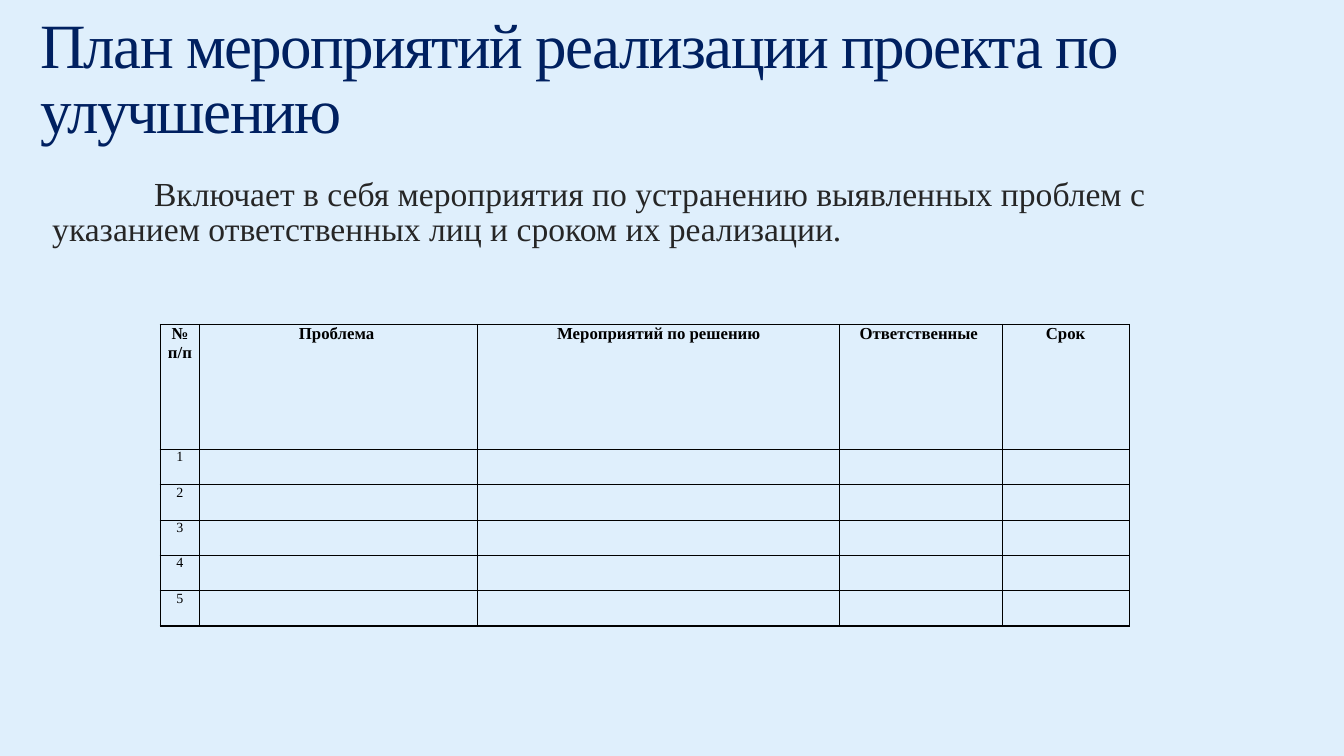
from lxml.etree import SubElement as Sub
from pptx import Presentation
from pptx.dml.color import RGBColor
from pptx.enum.text import MSO_ANCHOR as Anchor, PP_ALIGN as Align
from pptx.oxml.ns import qn
from pptx.util import Inches, Pt

SKY = RGBColor(0xDF, 0xEF, 0xFC)
NAVY = RGBColor(0x00, 0x20, 0x60)
GREY = RGBColor(0x26, 0x26, 0x26)
BLACK = RGBColor(0, 0, 0)
FONT = "Times New Roman"


def write(frame, text, size, color, bold=False):
    """Put one formatted run into the frame's first paragraph."""
    para = frame.paragraphs[0]
    run = para.add_run()
    run.text = text
    for key, value in {"name": FONT, "size": Pt(size), "bold": bold}.items():
        setattr(run.font, key, value)
    run.font.color.rgb = color
    return para, run


def edge(cell):
    """Draw a thin black line on all four sides of the cell."""
    props = cell._tc.get_or_add_tcPr()
    for side in ("lnL", "lnR", "lnT", "lnB"):
        line = Sub(props, qn(f"a:{side}"), w=str(Pt(1)))
        fill = Sub(line, qn("a:solidFill"))
        Sub(fill, qn("a:srgbClr"), val=str(BLACK))


# Slide
deck = Presentation()
deck.slide_width, deck.slide_height = Inches(13.33), Inches(7.5)
slide = deck.slides.add_slide(deck.slide_layouts[6])
back = slide.background.fill
back.solid()
back.fore_color.rgb = SKY

# Title and lead text
TEXTS = [
    ((0.3, 0.24, 11.78, 1.14), Anchor.MIDDLE, 45, NAVY,
     "План мероприятий реализации проекта по улучшению"),
    ((0.32, 1.73, 11.76, 1.14), Anchor.TOP, 24, GREY,
     "Включает в себя мероприятия по устранению выявленных проблем "
     "с указанием ответственных лиц и сроком их реализации."),
]
lines = []
for place, anchor, size, color, text in TEXTS:
    frame = slide.shapes.add_textbox(*map(Inches, place)).text_frame
    frame.word_wrap = True
    frame.vertical_anchor = anchor
    para, run = write(frame, text, size, color)
    para.line_spacing = 0.85
    lines.append((para, run))

# Tight letters in the title, first-line indent in the lead
lines[0][1]._r.get_or_add_rPr().set("spc", "-120")
lead = lines[1][0]._p.get_or_add_pPr()
lead.set("marL", str(Inches(0.1)))
lead.set("indent", str(Inches(1.01)))

# Plan table
HEADS = ["№ п/п", "Проблема ", "Мероприятий по решению",
         "Ответственные ", "Срок"]
WIDTHS = [0.39, 2.76, 3.59, 1.61, 1.26]
HEIGHTS = [1.24] + [0.35] * 5
MARGINS = {"margin_left": 0.06, "margin_right": 0.06,
           "margin_top": 0, "margin_bottom": 0}

table = slide.shapes.add_table(
    len(HEIGHTS), len(WIDTHS), Inches(1.59), Inches(3.22),
    Inches(sum(WIDTHS)), Inches(sum(HEIGHTS))).table
table.first_row = table.horz_banding = False
for col, width in zip(table.columns, WIDTHS):
    col.width = Inches(width)
for row, height in zip(table.rows, HEIGHTS):
    row.height = Inches(height)

for r in range(len(HEIGHTS)):
    for c, head in enumerate(HEADS):
        cell = table.cell(r, c)
        for key, value in MARGINS.items():
            setattr(cell, key, Inches(value))
        edge(cell)
        cell.fill.background()
        if r == 0:
            para, run = write(cell.text_frame, head, 12, BLACK, True)
            para.alignment = Align.CENTER
        elif c == 0:
            para, run = write(cell.text_frame, str(r), 10, BLACK)
            para.alignment = Align.CENTER

deck.save("out.pptx")
